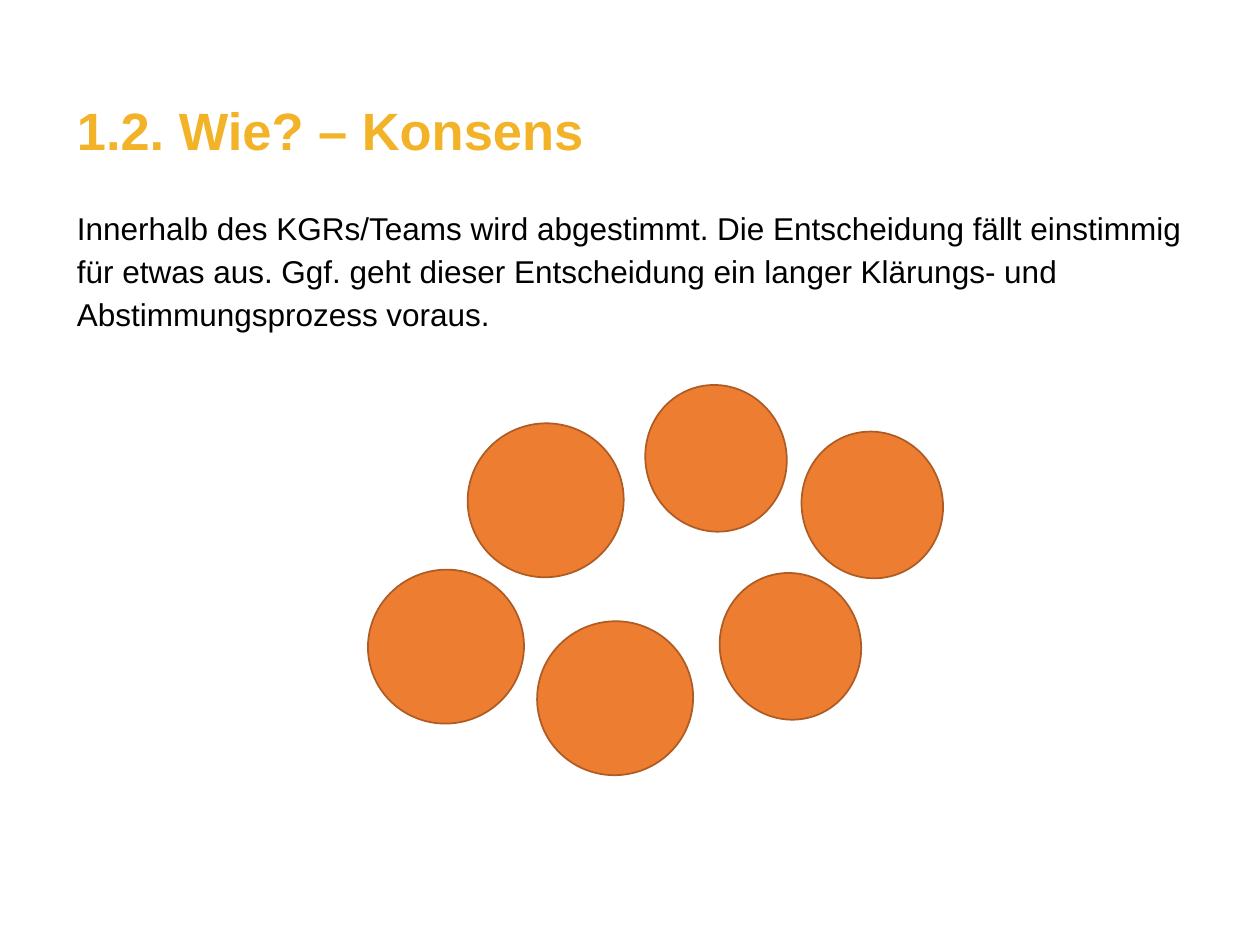
from pptx import Presentation
from pptx.dml.color import RGBColor
from pptx.enum.shapes import MSO_SHAPE
from pptx.enum.text import MSO_ANCHOR
from pptx.util import Cm, Pt

ELLIPSE = MSO_SHAPE.OVAL
TOP = MSO_ANCHOR.TOP


def color(value):
    return RGBColor.from_string(value)


def add_text(s, top, height, text, size, hex_color, bold, spacing):
    tf = s.shapes.add_textbox(Cm(1.3), Cm(top), Cm(23.01), Cm(height)).text_frame
    tf.word_wrap = True
    tf.vertical_anchor = TOP
    p = tf.paragraphs[0]
    p.line_spacing = spacing
    r = p.add_run()
    r.text = text
    r.font.name = "Arial"
    r.font.size = Pt(size)
    r.font.bold = bold
    r.font.color.rgb = color(hex_color)


prs = Presentation()
prs.slide_width, prs.slide_height = Cm(25.4), Cm(19.05)
s = prs.slides.add_slide(prs.slide_layouts[6])

add_text(s, 4, 14.22,
         "Innerhalb des KGRs/Teams wird abgestimmt. Die Entscheidung fällt "
         "einstimmig für etwas aus. Ggf. geht dieser Entscheidung ein langer "
         "Klärungs- und Abstimmungsprozess voraus.",
         18, "000000", False, Pt(24.4))
add_text(s, 2, 2, "1.2. Wie? – Konsens", 30, "F3B329", True, 0.9)

# Width, height, rotation and top-left corners of each group of circles
circle_groups = [
    (2.97, 2.84, 71.9, [(16.1, 8.76), (12.95, 7.82), (14.45, 11.61)]),
    (3.1, 3.15, 254.2, [(7.44, 11.46), (10.85, 12.5), (9.45, 8.51)]),
]
for width, height, rotation, corners in circle_groups:
    for left, top in corners:
        sp = s.shapes.add_shape(ELLIPSE, Cm(left), Cm(top), Cm(width), Cm(height))
        sp.rotation = rotation
        sp.shadow.inherit = False
        sp.fill.solid()
        sp.fill.fore_color.rgb = color("ED7D31")
        sp.line.color.rgb = color("AF5C24")
        sp.line.width = Pt(1)

prs.save("out.pptx")
